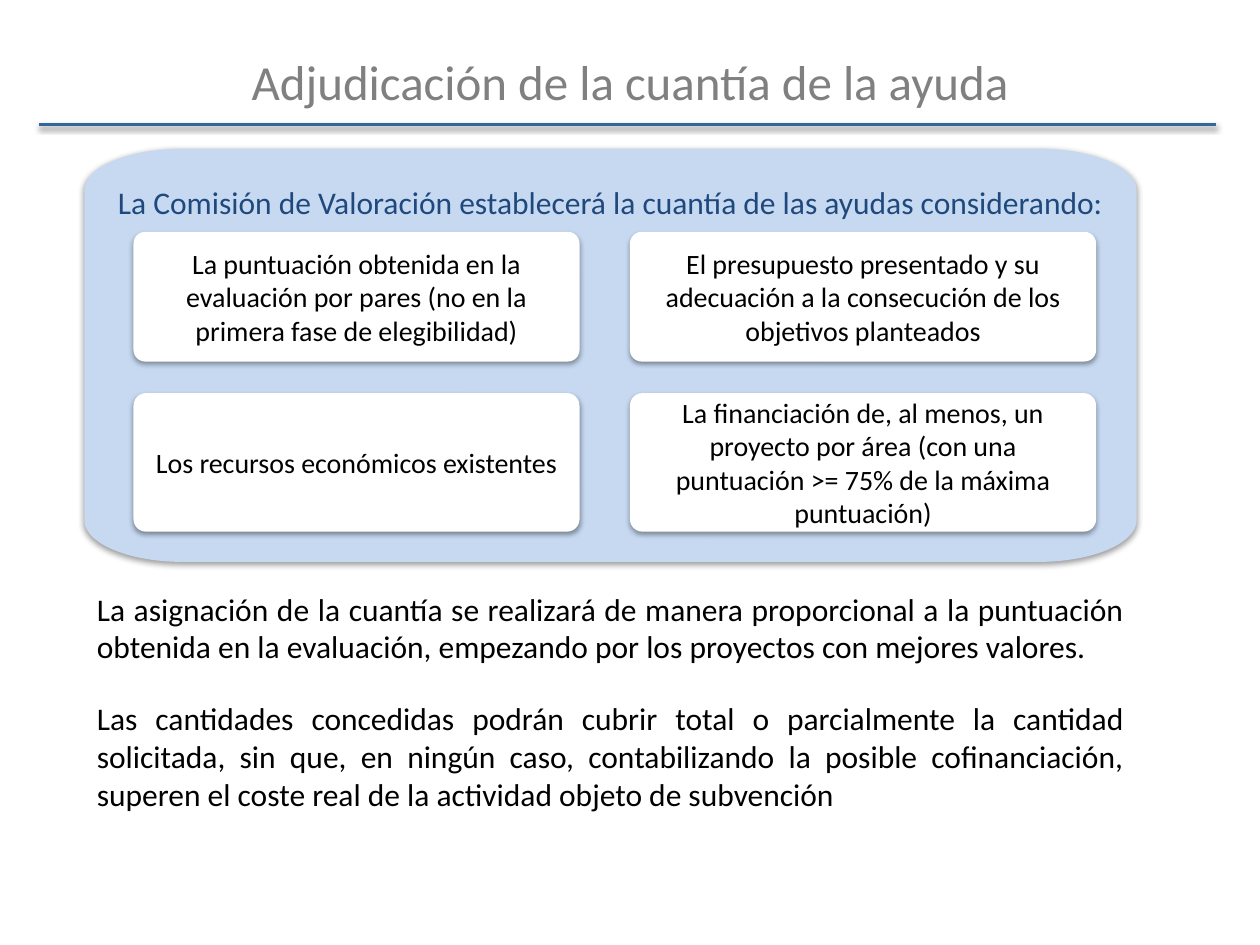
from dataclasses import dataclass
from math import cos, pi, sin

from lxml import etree
from pptx import Presentation
from pptx.dml.color import RGBColor
from pptx.enum.shapes import MSO_CONNECTOR, MSO_SHAPE
from pptx.enum.text import MSO_ANCHOR, MSO_AUTO_SIZE, PP_ALIGN
from pptx.oxml.ns import qn
from pptx.util import Inches, Pt

LINE, ROUND = MSO_CONNECTOR.STRAIGHT, MSO_SHAPE.ROUNDED_RECTANGLE
MIDDLE, TOP = MSO_ANCHOR.MIDDLE, MSO_ANCHOR.TOP
GROW, FIXED = MSO_AUTO_SIZE.SHAPE_TO_FIT_TEXT, MSO_AUTO_SIZE.NONE
CENTER, JUSTIFY = PP_ALIGN.CENTER, PP_ALIGN.JUSTIFY
COLS, ROWS = 100, 75


@dataclass(frozen=True)
class Theme:
    """Colours, font and type sizes."""
    font: str = "Calibri"
    gray: str = "808080"
    rule: str = "336699"
    pale: str = "C6D9F1"
    navy: str = "1F497D"
    black: str = "000000"
    white: str = "FFFFFF"
    title: int = 28
    body: int = 18
    card: int = 16


class Deck:
    """Holds the theme and the current slide, and draws on a grid."""

    def __init__(self, theme):
        """Open a title-only slide."""
        self.theme = theme
        self.show = Presentation()
        self.show.slide_width, self.show.slide_height = Inches(10), Inches(7.5)
        self.slide = self.show.slides.add_slide(self.show.slide_layouts[5])

    def grid(self, *cells):
        """Turn alternating columns and rows into lengths."""
        units = self.show.slide_width / COLS, self.show.slide_height / ROWS
        return [round(n * units[i % 2]) for i, n in enumerate(cells)]

    def shade(self, shape):
        """Give a shape the soft shadow below it."""
        props = shape._element.spPr
        for old in props.findall(qn("a:effectLst")):
            props.remove(old)
        node = etree.SubElement(props, qn("a:effectLst"))
        node = etree.SubElement(node, qn("a:outerShdw"), blurRad="40000", dist="20000",
                                dir="5400000", rotWithShape="0")
        node = etree.SubElement(node, qn("a:srgbClr"), val=self.theme.black)
        etree.SubElement(node, qn("a:alpha"), val="38000")

    def paint(self, shape, color):
        """Fill a shape, drop its outline and shade it."""
        shape.fill.solid()
        shape.fill.fore_color.rgb = RGBColor.from_string(color)
        shape.line.fill.background()
        self.shade(shape)

    def label(self, shape, text, size, color, align=CENTER, anchor=MIDDLE,
              fit=FIXED, pads=(0.1, 0.05, 0.1, 0.05)):
        """Put formatted text in a shape."""
        frame = shape.text_frame
        frame.text = text
        sides = ("margin_left", "margin_top", "margin_right", "margin_bottom")
        look = dict(zip(sides, map(Inches, pads)), word_wrap=True,
                    vertical_anchor=anchor, auto_size=fit)
        for name, value in look.items():
            setattr(frame, name, value)
        para = frame.paragraphs[0]
        para.alignment = align
        for name, value in {"name": self.theme.font, "size": Pt(size)}.items():
            setattr(para.font, name, value)
        para.font.color.rgb = RGBColor.from_string(color)

    def title(self, text, *box):
        """Place the title."""
        shape = self.slide.shapes.title
        for name, value in zip(("left", "top", "width", "height"), self.grid(*box)):
            setattr(shape, name, value)
        self.label(shape, text, self.theme.title, self.theme.gray)

    def rule(self, *ends):
        """Draw the line below the title."""
        line = self.slide.shapes.add_connector(LINE, *self.grid(*ends))
        line.line.width = Pt(2)
        line.line.color.rgb = RGBColor.from_string(self.theme.rule)
        self.shade(line)

    def panel(self, text, left, top, width, height, wide, tall):
        """Draw the large panel with elliptic corners."""
        steps = 24
        mid_x, mid_y = left + width / 2, top + height / 2
        points = []
        for turn, (sx, sy) in enumerate(((1, 1), (-1, 1), (-1, -1), (1, -1))):
            for step in range(steps + 1):
                angle = (turn + step / steps) * pi / 2
                points.append(self.grid(mid_x + sx * (width / 2 - wide) + wide * cos(angle),
                                        mid_y + sy * (height / 2 - tall) + tall * sin(angle)))
        pen = self.slide.shapes.build_freeform(*points[0])
        pen.add_line_segments(points[1:], close=True)
        shape = pen.convert_to_shape()
        self.paint(shape, self.theme.pale)
        self.label(shape, text, self.theme.body, self.theme.navy,
                   pads=(0.08, 0.08, 0.08, 2.51))

    def card(self, text, pad, *box):
        """Draw a white rounded card."""
        shape = self.slide.shapes.add_shape(ROUND, *self.grid(*box))
        shape.adjustments[0] = 0.09
        self.paint(shape, self.theme.white)
        self.label(shape, text, self.theme.card, self.theme.black,
                   pads=(pad, 0.06, pad, 0.06))
        shape.text_frame.paragraphs[0].space_after = Pt(6)

    def note(self, text, *box):
        """Add a justified paragraph."""
        shape = self.slide.shapes.add_textbox(*self.grid(*box))
        self.label(shape, text, self.theme.body, self.theme.black, JUSTIFY, TOP, GROW)


def main():
    """Build the slide."""
    deck = Deck(Theme())
    deck.title("Adjudicación de la cuantía de la ayuda", 5, 3, 90, 6.9)
    deck.rule(3.1, 9.9, 96.5, 9.9)
    left, width = 6.7, 83.5
    deck.note("La asignación de la cuantía se realizará de manera proporcional a la puntuación "
              "obtenida en la evaluación, empezando por los proyectos con mejores valores.",
              left, 46.3, width, 7.1)
    deck.note("Las cantidades concedidas podrán cubrir total o parcialmente la cantidad "
              "solicitada, sin que, en ningún caso, contabilizando la posible cofinanciación, "
              "superen el coste real de la actividad objeto de subvención",
              left, 55, width, 10.1)
    deck.panel("La Comisión de Valoración establecerá la cuantía de las ayudas considerando:",
               left, 11.8, width, 32.8, 7.8, 3.3)
    cols = (10.6, 35.4), (50, 37)
    rows = (18.4, 10.3), (31.2, 11)
    cards = (
        (("La puntuación obtenida en la evaluación por pares (no en la primera fase de "
          "elegibilidad)", 0.08),
         ("El presupuesto presentado y su adecuación a la consecución de los objetivos "
          "planteados", 0)),
        (("Los recursos económicos existentes", 0.08),
         ("La financiación de, al menos, un proyecto por área (con una puntuación >= 75% "
          "de la máxima puntuación)", 0.16)),
    )
    for (y, high), line in zip(rows, cards):
        for (x, wide), (text, pad) in zip(cols, line):
            deck.card(text, pad, x, y, wide, high)
    deck.show.save("out.pptx")


if __name__ == "__main__":
    main()
